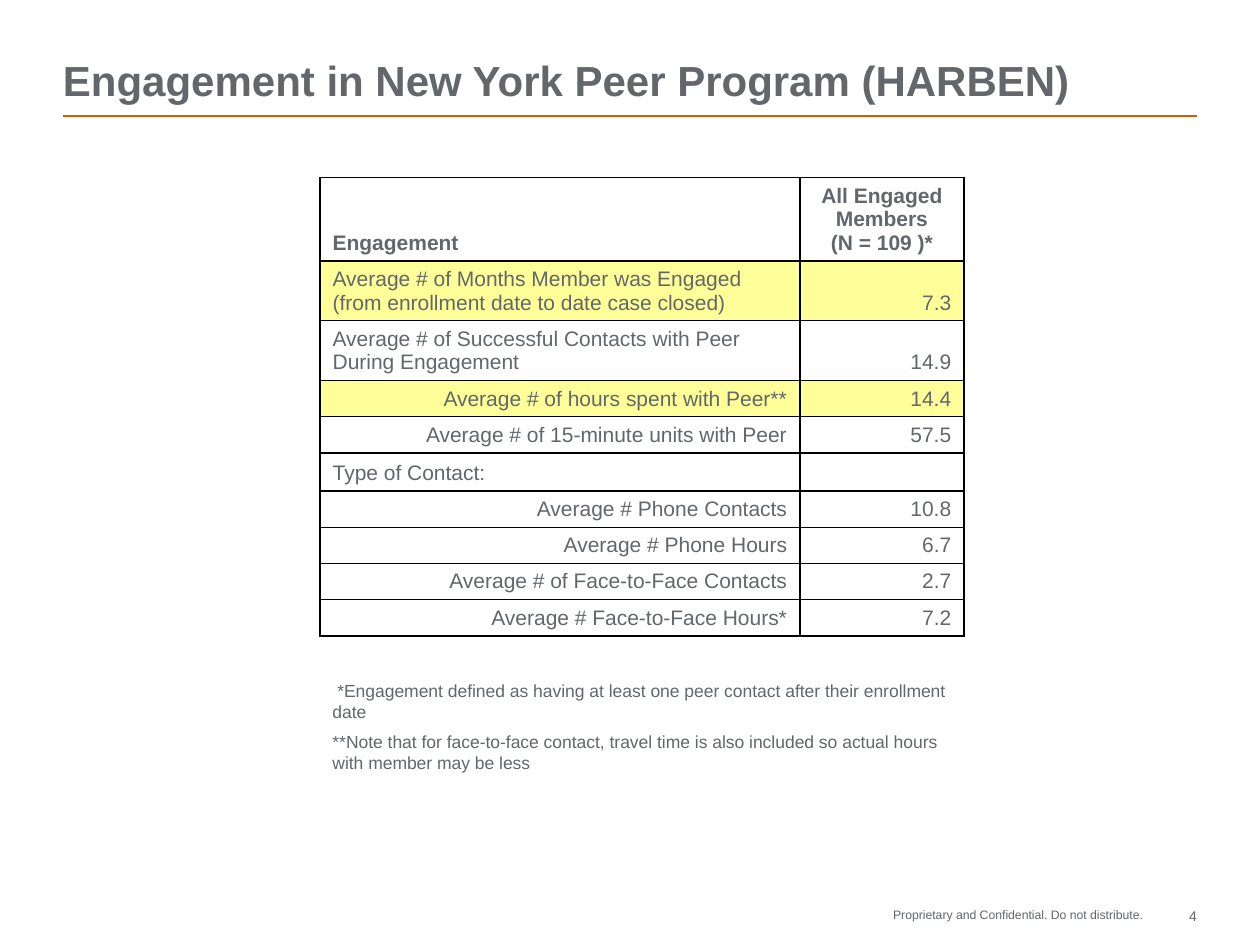
"""Build the peer program engagement slide with its table and footnotes."""
import dataclasses
import typing

import lxml.etree
import pptx
import pptx.dml.color
import pptx.enum.shapes
import pptx.enum.text
import pptx.oxml.ns
import pptx.util

Pt = pptx.util.Pt
qn = pptx.oxml.ns.qn
ALIGN = pptx.enum.text.PP_ALIGN
ANCHOR = pptx.enum.text.MSO_ANCHOR
GREY, ORANGE, YELLOW, BLACK = "63666A", "D45D00", "FFFF99", "000000"


@dataclasses.dataclass(frozen=True)
class Caption:
    box: tuple[float, float, float, float]
    lines: tuple[str, ...]
    size: float
    bold: bool = False
    wrap: bool = True
    inset: tuple[float, float] = (0, 0)
    anchor: typing.Any = ANCHOR.TOP
    paragraph: dict = dataclasses.field(default_factory=dict)


@dataclasses.dataclass(frozen=True)
class Measure:
    label: str
    value: str
    height: float = 20.6
    label_align: typing.Any = ALIGN.RIGHT
    value_align: typing.Any = ALIGN.RIGHT
    bold: bool = False
    fill: str = ""


CAPTIONS = (
    Caption((509.8, 518.4, 143.3, 8.6), ("Proprietary and Confidential. Do not distribute.",),
            7, wrap=False, paragraph={"alignment": ALIGN.RIGHT}),
    Caption((660.2, 518.4, 23.8, 12.2), ("4",), 8, paragraph={"alignment": ALIGN.RIGHT}),
    Caption((36, 12.2, 648, 48.2), ("Engagement in New York Peer Program (HARBEN)",),
            24, bold=True, anchor=ANCHOR.BOTTOM, paragraph={"line_spacing": 0.9}),
    Caption((182.9, 385.2, 366.5, 79.2), (
        " *Engagement defined as having at least one peer contact after their enrollment date",
        "**Note that for face-to-face contact, travel time is also included so actual hours "
        "with member may be less"), 10, inset=(7.2, 3.6)),
)
MEASURES = (
    Measure("Engagement", "All Engaged Members\v(N = 109 )*", 47.6, ALIGN.LEFT, ALIGN.CENTER, True),
    Measure("Average # of Months Member was Engaged (from enrollment date to date case closed)",
            "7.3", 34.2, ALIGN.LEFT, fill=YELLOW),
    Measure("Average # of Successful Contacts with Peer During Engagement", "14.9", 34.2, ALIGN.LEFT),
    Measure("Average # of hours spent with Peer**", "14.4", fill=YELLOW),
    Measure("Average # of 15-minute units with Peer", "57.5"),
    Measure("Type of Contact:", "", label_align=ALIGN.LEFT),
    Measure("Average # Phone Contacts", "10.8"),
    Measure("Average # Phone Hours", "6.7"),
    Measure("Average # of Face-to-Face Contacts", "2.7"),
    Measure("Average # Face-to-Face Hours*", "7.2"),
)
COLUMN_WIDTHS = (274.3, 93.6)


def rgb(code: str) -> pptx.dml.color.RGBColor:
    return pptx.dml.color.RGBColor.from_string(code)


def apply(target: typing.Any, values: dict) -> None:
    for name, value in values.items():
        setattr(target, name, value)


def write(paragraph: typing.Any, text: str, size: float, bold: bool, values: dict) -> None:
    apply(paragraph, values)
    paragraph.text = text
    for run in paragraph.runs:
        apply(run.font, {"name": "Arial", "size": Pt(size), "bold": bold})
        run.font.color.rgb = rgb(GREY)
    points = str(size * 100)
    for line_break in paragraph._p.findall(qn("a:br")):
        lxml.etree.SubElement(line_break, qn("a:rPr"), sz=points)
    if not text:
        lxml.etree.SubElement(paragraph._p, qn("a:endParaRPr"), sz=points)


def draw_caption(slide: typing.Any, caption: Caption) -> None:
    frame = slide.shapes.add_textbox(*map(Pt, caption.box)).text_frame
    side, top = map(Pt, caption.inset)
    apply(frame, {"word_wrap": caption.wrap, "vertical_anchor": caption.anchor,
                  "margin_left": side, "margin_right": side,
                  "margin_top": top, "margin_bottom": top})
    for index, line in enumerate(caption.lines):
        paragraph = frame.add_paragraph() if index else frame.paragraphs[0]
        spacing = {"space_before": Pt(5)} if index else {}
        write(paragraph, line, caption.size, caption.bold, caption.paragraph | spacing)


def draw_borders(cell: typing.Any) -> None:
    properties = cell._tc.get_or_add_tcPr()
    for index, side in enumerate(("a:lnL", "a:lnR", "a:lnT", "a:lnB")):
        border = lxml.etree.Element(qn(side), w=str(Pt(1)))
        fill = lxml.etree.SubElement(border, qn("a:solidFill"))
        lxml.etree.SubElement(fill, qn("a:srgbClr"), val=BLACK)
        properties.insert(index, border)


def draw_measures(slide: typing.Any, measures: tuple[Measure, ...]) -> None:
    height = sum(measure.height for measure in measures)
    table = slide.shapes.add_table(len(measures), len(COLUMN_WIDTHS), Pt(182.9), Pt(101.5),
                                   Pt(sum(COLUMN_WIDTHS)), Pt(height)).table
    apply(table, {"first_row": False, "horz_banding": False})
    for column, width in zip(table.columns, COLUMN_WIDTHS):
        column.width = Pt(width)
    for row, measure in zip(table.rows, measures):
        row.height = Pt(measure.height)
        entries = ((measure.label, measure.label_align), (measure.value, measure.value_align))
        for cell, (text, alignment) in zip(row.cells, entries):
            cell.vertical_anchor = ANCHOR.BOTTOM
            write(cell.text_frame.paragraphs[0], text, 12, measure.bold, {"alignment": alignment})
            if measure.fill:
                cell.fill.solid()
                cell.fill.fore_color.rgb = rgb(measure.fill)
            else:
                cell.fill.background()
            draw_borders(cell)


def draw_title_rule(slide: typing.Any) -> None:
    rule = slide.shapes.add_connector(pptx.enum.shapes.MSO_CONNECTOR.STRAIGHT,
                                      Pt(36), Pt(66.2), Pt(684), Pt(66.2))
    rule.line.width = Pt(1)
    rule.line.color.rgb = rgb(ORANGE)
    lxml.etree.SubElement(rule._element.spPr, qn("a:effectLst"))


def main() -> None:
    presentation = pptx.Presentation()
    apply(presentation, {"slide_width": Pt(720), "slide_height": Pt(540)})
    slide = presentation.slides.add_slide(presentation.slide_layouts[6])
    draw_title_rule(slide)
    draw_measures(slide, MEASURES)
    for caption in CAPTIONS:
        draw_caption(slide, caption)
    presentation.save("out.pptx")


if __name__ == "__main__":
    main()
